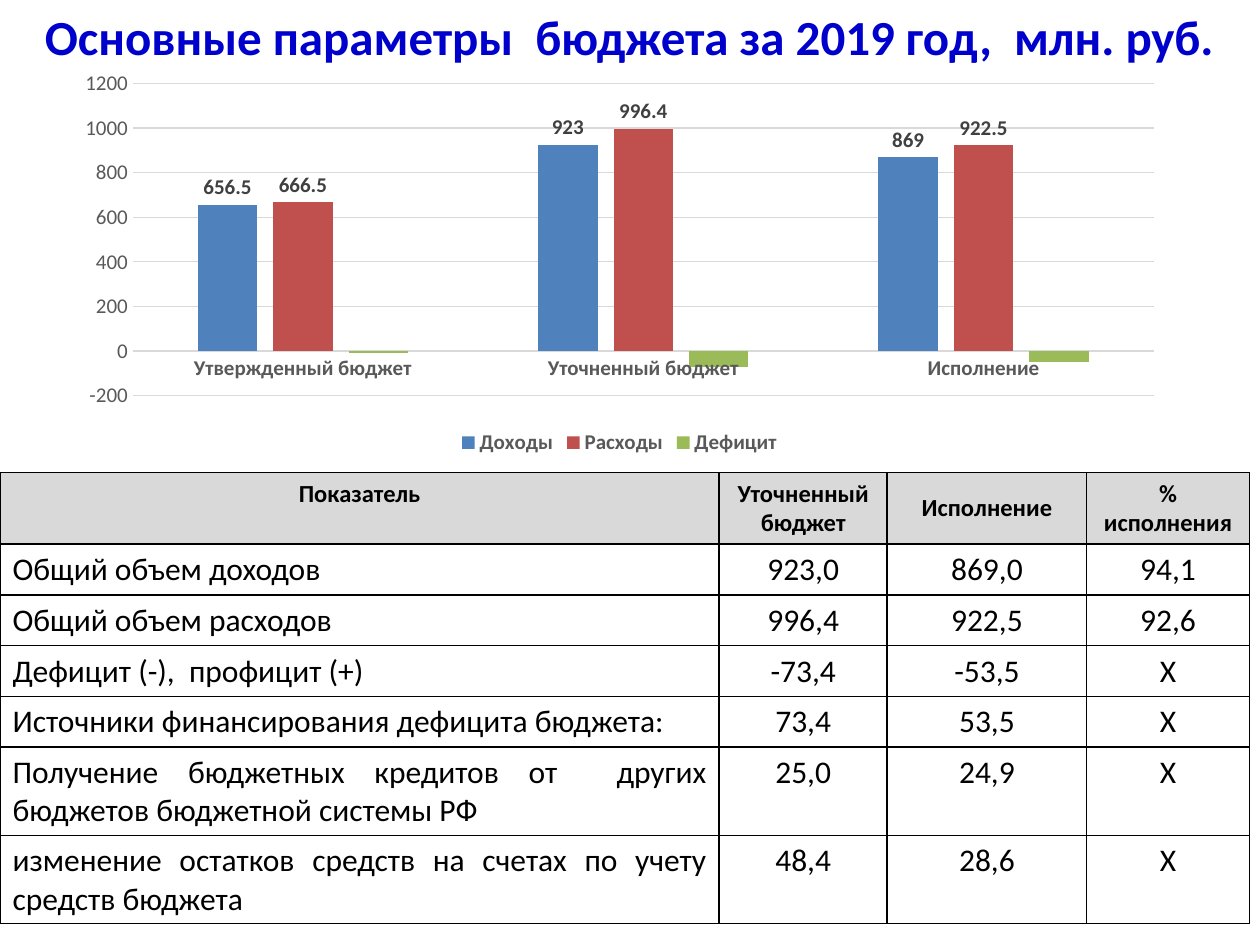
from lxml import etree
from pptx import Presentation
from pptx.chart.data import CategoryChartData
from pptx.dml.color import RGBColor
from pptx.enum.chart import XL_CHART_TYPE, XL_LABEL_POSITION, XL_LEGEND_POSITION, XL_TICK_MARK
from pptx.enum.text import MSO_ANCHOR, MSO_AUTO_SIZE, PP_ALIGN
from pptx.oxml.ns import qn
from pptx.util import Pt

CLUSTERED = XL_CHART_TYPE.COLUMN_CLUSTERED
OUTSIDE = XL_LABEL_POSITION.OUTSIDE_END
BOTTOM = XL_LEGEND_POSITION.BOTTOM
NO_TICK = XL_TICK_MARK.NONE
TOP, MIDDLE = MSO_ANCHOR.TOP, MSO_ANCHOR.MIDDLE
GROW = MSO_AUTO_SIZE.SHAPE_TO_FIT_TEXT
CENTER, JUSTIFY = PP_ALIGN.CENTER, PP_ALIGN.JUSTIFY

FONT = "Calibri"
COLORS = {
    "title": "0000CC", "paper": "FFFFFF", "ink": "000000", "header": "D9D9D9",
    "grid": "D9D9D9", "axis": "595959", "label": "404040",
    "income": "4F81BD", "expense": "C0504D", "deficit": "9BBB59",
}

PERIODS = ["Утвержденный бюджет", "Уточненный бюджет", "Исполнение"]
SERIES = [
    ("Доходы", "income", (656.5, 923, 869), True),
    ("Расходы", "expense", (666.5, 996.4, 922.5), True),
    ("Дефицит", "deficit", (-10, -70, -50), False),
]
COLUMN_WIDTHS = [411, 96, 114, 93]
ROW_HEIGHTS = [41, 29, 29, 29, 29, 50, 50]
INDICATORS = [
    ["Показатель", "Уточненный бюджет", "Исполнение", "% исполнения"],
    ["Общий объем доходов", "923,0", "869,0", "94,1"],
    ["Общий объем расходов", "996,4", "922,5", "92,6"],
    ["Дефицит (-),  профицит (+)", "-73,4", "-53,5", "Х"],
    ["Источники финансирования дефицита бюджета:", "73,4", "53,5", "Х"],
    ["Получение бюджетных кредитов от  других бюджетов бюджетной системы РФ",
     "25,0", "24,9", "Х"],
    ["изменение остатков средств на счетах по учету средств бюджета",
     "48,4", "28,6", "Х"],
]


def rgb(color):
    return RGBColor.from_string(COLORS[color])


class BudgetSlide:
    def __init__(self, deck):
        self.slide = deck.slides.add_slide(deck.slide_layouts[5])

    def style(self, font, size, color, bold=False):
        font.name, font.size, font.bold = FONT, Pt(size), bold
        font.color.rgb = rgb(color)

    def fill(self, part, color):
        part.fill.solid()
        part.fill.fore_color.rgb = rgb(color)

    def title(self, text, left, top, width, height):
        title = self.slide.shapes.title
        title.left, title.top, title.width, title.height = map(Pt, (left, top, width, height))
        self.fill(title, "paper")
        frame = title.text_frame
        frame.text = text
        frame.word_wrap = True
        frame.auto_size = GROW
        frame.vertical_anchor = TOP
        heading = frame.paragraphs[0]
        heading.alignment = CENTER
        self.style(heading.font, 28, "title", True)

    def borders(self, cell):
        properties = cell._tc.get_or_add_tcPr()
        for index, side in enumerate(("lnL", "lnR", "lnT", "lnB")):
            line = etree.Element(qn("a:" + side), w=str(Pt(1)))
            solid = etree.SubElement(line, qn("a:solidFill"))
            etree.SubElement(solid, qn("a:srgbClr"), val=COLORS["ink"])
            properties.insert(index, line)

    def table(self, rows, left, top):
        table = self.slide.shapes.add_table(
            len(rows), len(COLUMN_WIDTHS), Pt(left), Pt(top),
            Pt(sum(COLUMN_WIDTHS)), Pt(sum(ROW_HEIGHTS))).table
        for column, width in zip(table.columns, COLUMN_WIDTHS):
            column.width = Pt(width)
        for row, height in zip(table.rows, ROW_HEIGHTS):
            row.height = Pt(height)
        for r, row in enumerate(rows):
            for c, text in enumerate(row):
                self.cell(table.cell(r, c), text, r == 0, c == 0)

    def cell(self, cell, text, is_header, is_name):
        cell.text = text
        cell.vertical_anchor = MIDDLE if is_header and not is_name else TOP
        if is_header:
            self.fill(cell, "header")
        else:
            cell.fill.background()
        self.borders(cell)
        paragraph = cell.text_frame.paragraphs[0]
        paragraph.alignment = JUSTIFY if is_name and not is_header else CENTER
        self.style(paragraph.font, 14 if is_header else 18, "ink", is_header)

    def chart(self, left, top, width, height):
        data = CategoryChartData()
        data.categories = PERIODS
        for name, _, values, _ in SERIES:
            data.add_series(name, values)
        chart = self.slide.shapes.add_chart(
            CLUSTERED, Pt(left), Pt(top), Pt(width), Pt(height), data).chart
        self.style(chart.font, 10, "ink")
        chart.has_title = False
        chart.has_legend = True
        chart.legend.position = BOTTOM
        chart.legend.include_in_layout = False
        self.style(chart.legend.font, 12, "axis", True)
        self.axes(chart)
        plot = chart.plots[0]
        plot.gap_width, plot.overlap = 219, -27
        plot.vary_by_categories = False
        for series, (_, color, _, labelled) in zip(plot.series, SERIES):
            self.fill(series.format, color)
            series.invert_if_negative = False
            if labelled:
                labels = series.data_labels
                labels.show_value = True
                labels.position = OUTSIDE
                self.style(labels.font, 12, "label", True)

    def axes(self, chart):
        periods, amounts = chart.category_axis, chart.value_axis
        for axis, bold in ((periods, True), (amounts, False)):
            axis.major_tick_mark = axis.minor_tick_mark = NO_TICK
            self.style(axis.tick_labels.font, 12, "axis", bold)
        amounts.minimum_scale, amounts.maximum_scale = -200, 1200
        amounts.major_unit = 200
        amounts.has_major_gridlines = True
        amounts.format.line.fill.background()
        for line in (periods.format.line, amounts.major_gridlines.format.line):
            line.color.rgb = rgb("grid")
            line.width = Pt(0.75)


def main():
    deck = Presentation()
    deck.slide_width, deck.slide_height = Pt(720), Pt(540)
    budget = BudgetSlide(deck)
    budget.title("Основные параметры  бюджета за 2019 год,  млн. руб.", -0.5, 0, 720, 41)
    budget.table(INDICATORS, 0, 270)
    budget.chart(36, 36, 636, 227)
    deck.save("out.pptx")


if __name__ == "__main__":
    main()
